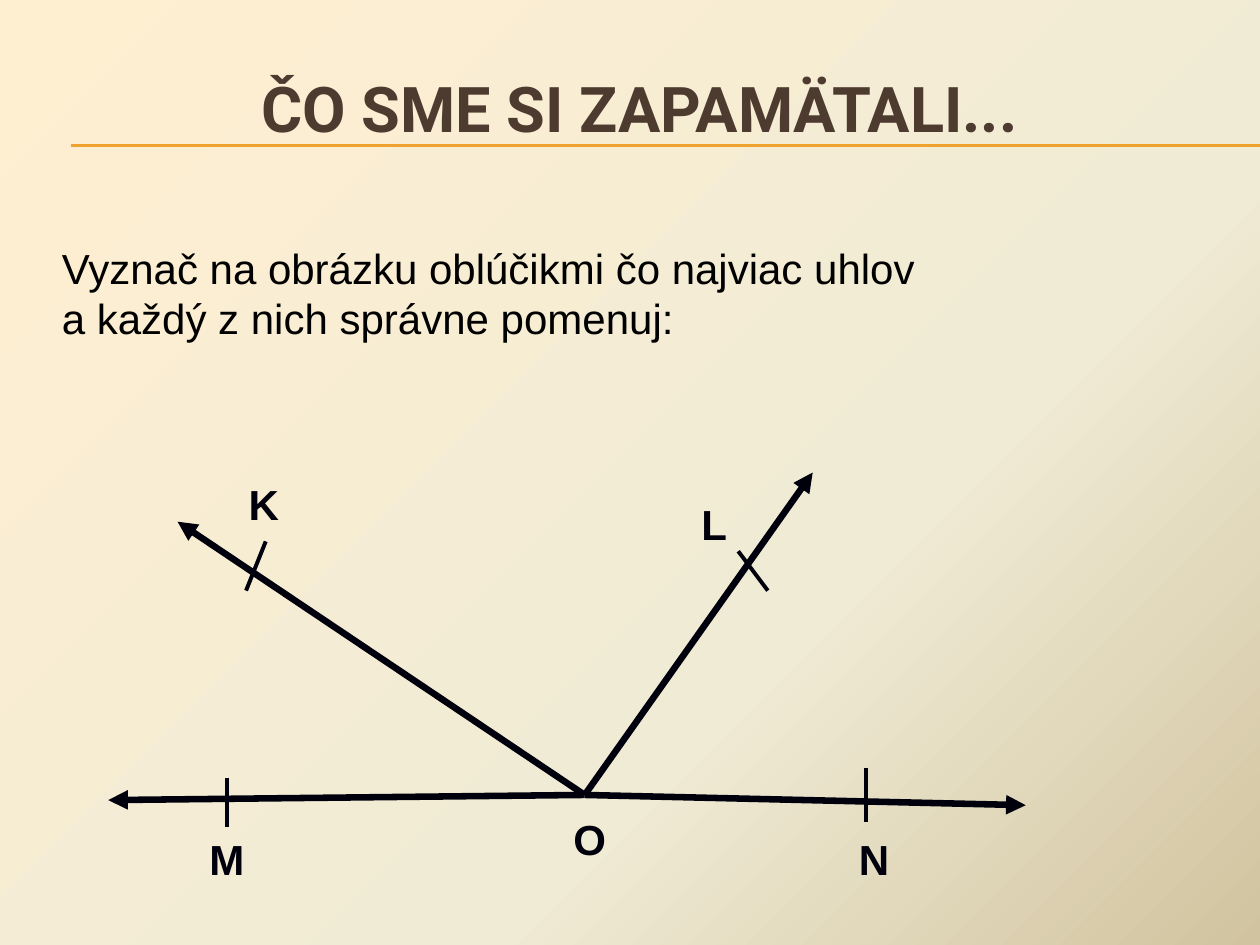
import pptx
import pptx.util
import pptx.dml.color
import pptx.enum.shapes
import pptx.enum.text
import pptx.oxml
import pptx.oxml.ns
from lxml import etree

prs = pptx.Presentation()
prs.slide_width = pptx.util.Inches(10)
prs.slide_height = pptx.util.Inches(7.5)
COL = prs.slide_width / 64
ROW = prs.slide_height / 48
INK = "00000C"
s = prs.slides.add_slide(prs.slide_layouts[1])


def add_line(shapes, start, end, color, width):
    ends = [int(v * u) for v, u in zip(start + end, (COL, ROW, COL, ROW))]
    sp = shapes.add_connector(pptx.enum.shapes.MSO_CONNECTOR.STRAIGHT, *ends)
    sp.line.color.rgb = pptx.dml.color.RGBColor.from_string(color)
    sp.line.width = pptx.util.Pt(width)
    etree.SubElement(sp._element.spPr, pptx.oxml.ns.qn("a:effectLst"))
    return sp


def fill_text(sp, box, lines, font, size, color, bold, align):
    sp.left, sp.top, sp.width, sp.height = [
        int(v * u) for v, u in zip(box, (COL, ROW, COL, ROW))]
    tf = sp.text_frame
    tf.word_wrap = True
    tf.auto_size = pptx.enum.text.MSO_AUTO_SIZE.NONE
    tf.vertical_anchor = pptx.enum.text.MSO_ANCHOR.TOP
    for i, line in enumerate(lines):
        p = tf.add_paragraph() if i else tf.paragraphs[0]
        p.alignment = align
        p.space_before = pptx.util.Pt(0)
        r = p.add_run()
        r.text = line
        r.font.name = font
        r.font.size = pptx.util.Pt(size)
        r.font.bold = bold
        r.font.color.rgb = pptx.dml.color.RGBColor.from_string(color)


fill = s.background.fill
fill.gradient()
grad = s._element.cSld.bg.bgPr.find(pptx.oxml.ns.qn("a:gradFill"))
stops = grad.find(pptx.oxml.ns.qn("a:gsLst"))
for stop in list(stops):
    stops.remove(stop)
for share, color in [(0, "FFEFD1"), (65, "F0EBD5"), (100, "D1C39F")]:
    stop = etree.SubElement(stops, pptx.oxml.ns.qn("a:gs"), pos=str(share * 1000))
    etree.SubElement(stop, pptx.oxml.ns.qn("a:srgbClr"), val=color)
grad.find(pptx.oxml.ns.qn("a:lin")).set("ang", str(45 * 60000))

for y in (7.36, 7.42):
    add_line(s.shapes, (3.6, y), (64, y), "F0A22E", 0.75)

left = pptx.enum.text.PP_ALIGN.LEFT
center = pptx.enum.text.PP_ALIGN.CENTER
fill_text(s.shapes.title, (2.1, 3.2, 60.8, 5.9), ["ČO SME SI ZAPAMÄTALI..."],
          "Roboto", 36, "4E3B30", True, center)
body = s.placeholders[1]
fill_text(body, (2.5, 12, 58, 5.8),
          ["Vyznač na obrázku oblúčikmi čo najviac uhlov",
           "a každý z nich správne pomenuj:"],
          "Arial", 24, "000000", False, left)
for p in body.text_frame.paragraphs:
    pPr = p._p.get_or_add_pPr()
    pPr.set("marL", "0")
    pPr.set("indent", "0")
    etree.SubElement(pPr, pptx.oxml.ns.qn("a:buNone"))

vertex = (29.7, 40.38)
rays = s.shapes.add_group_shape()
for tip in [(52.1, 40.9), (5.5, 40.64), (41.28, 24), (9.02, 26.5)]:
    sp = add_line(rays.shapes, vertex, tip, INK, 3.75)
    etree.SubElement(sp.line._get_or_add_ln(), pptx.oxml.ns.qn("a:tailEnd"), type="triangle")

for start, end in [((11.52, 39.5), (11.52, 42)), ((13.5, 27.5), (12.5, 30)),
                   ((37.5, 28), (39, 30)), ((44, 39), (44, 41.75))]:
    add_line(s.shapes, start, end, INK, 2.25)

for name, x, y in [("K", 12, 24), ("L", 35, 25), ("O", 28.5, 41), ("N", 43, 42), ("M", 10, 42)]:
    sp = s.shapes.add_textbox(0, 0, 0, 0)
    fill_text(sp, (x, y, 3, 3.2), [name], "Arial", 24, INK, True, left)
    sp.text_frame.word_wrap = False

prs.save("out.pptx")
